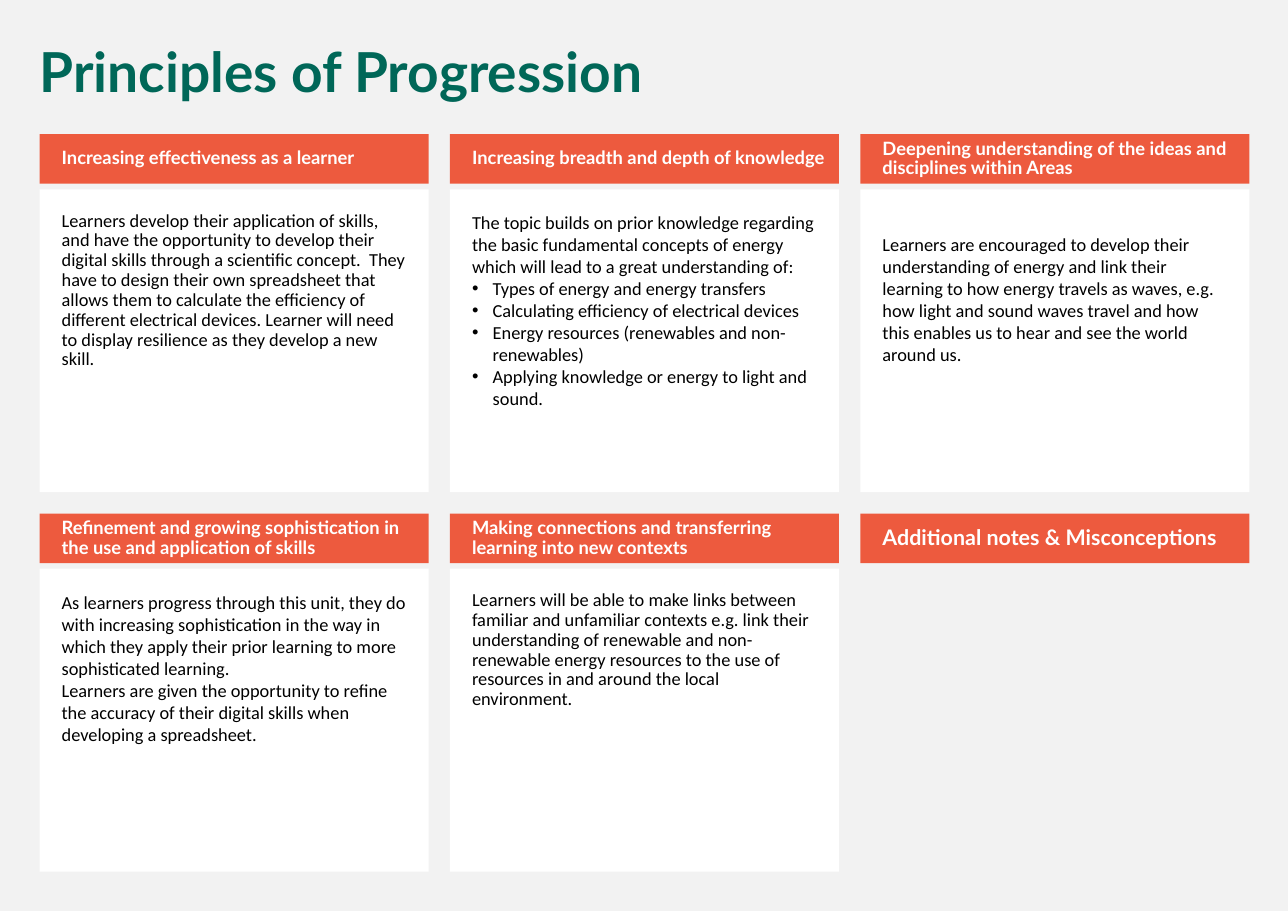
from lxml.etree import SubElement
from pptx import Presentation
from pptx.dml.color import RGBColor
from pptx.enum.shapes import MSO_SHAPE
from pptx.enum.text import MSO_ANCHOR, PP_ALIGN
from pptx.oxml.ns import qn
from pptx.util import Pt

COLORS = {"page": "F2F2F2", "card": "FFFFFF", "header": "ED5A3E",
          "title": "006758", "header_text": "FFFFFF", "body_text": "000000"}

TIGHT = {"line_spacing": 0.9, "space_before": Pt(11)}
LOOSE = {"line_spacing": 1.0, "space_before": Pt(0)}
TITLE_FONT = {"name": "Lato", "size": Pt(36), "bold": True}
HEADER_FONT = {"name": "Lato", "size": Pt(12), "bold": True}
NOTES_FONT = {**HEADER_FONT, "size": Pt(14)}
BODY_FONT = {"name": "Calibri", "size": Pt(12), "bold": False}

LEFT, TOP = 25.9, 87.7
COL_STEP, ROW_STEP = 268.2, 248
CARD_W, HEADER_H = 254.2, 32.4
BODY_OFFSET, BODY_H = 36, 198
PAD, BULLET_INDENT = 14.4, 13.5

# Each card: header, body paragraphs, paragraph format, extra space above the body
CARDS = [
    ("Increasing effectiveness as a learner",
     ["Learners develop their application of skills, and have the opportunity to "
      "develop their digital skills through a scientific concept.  They have to "
      "design their own spreadsheet that allows them to calculate the efficiency "
      "of different electrical devices. Learner will need to display resilience "
      "as they develop a new skill. "], TIGHT, 0),
    ("Increasing breadth and depth of knowledge",
     ["The topic builds on prior knowledge regarding the basic fundamental "
      "concepts of energy which will lead to a great understanding of:",
      "• Types of energy and energy transfers",
      "• Calculating efficiency of electrical devices",
      "• Energy resources (renewables and non-renewables)",
      "• Applying knowledge or energy to light and sound. "], LOOSE, 0),
    ("Deepening understanding of the ideas and disciplines within Areas",
     ["Learners are encouraged to develop their understanding of energy and link "
      "their learning to how energy travels as waves, e.g. how light and sound "
      "waves travel and how this enables us to hear and see the world around us. "],
     LOOSE, 14.4),
    ("Refinement and growing sophistication in the use and application of skills",
     ["As learners progress through this unit, they do with increasing "
      "sophistication in the way in which they apply their prior learning to more "
      "sophisticated learning. ",
      "Learners are given the opportunity to refine the accuracy of their digital "
      "skills when developing a spreadsheet."], LOOSE, 0),
    ("Making connections and transferring learning into new contexts",
     ["Learners will be able to make links between familiar and unfamiliar "
      "contexts e.g. link their understanding of renewable and non-renewable "
      "energy resources to the use of resources in and around the local "
      "environment. "], TIGHT, 0),
    ("Additional notes & Misconceptions", [], TIGHT, 0),
]


def rgb(name):
    return RGBColor.from_string(COLORS[name])


def set_all(obj, values):
    for name, value in values.items():
        setattr(obj, name, value)


def add_bullet(p):
    pPr = p._p.get_or_add_pPr()
    pPr.set("marL", str(Pt(BULLET_INDENT)))
    pPr.set("indent", str(-Pt(BULLET_INDENT)))
    SubElement(pPr, qn("a:buFont")).set("typeface", "Arial")
    SubElement(pPr, qn("a:buChar")).set("char", "•")


def write(sp, paragraphs, font, color, spacing, insets, anchor=MSO_ANCHOR.TOP):
    """Fill a shape with paragraphs; a leading • makes a bulleted one."""
    tf = sp.text_frame
    sides = ("margin_left", "margin_top", "margin_right", "margin_bottom")
    set_all(tf, {"word_wrap": True, "vertical_anchor": anchor,
                 **dict(zip(sides, map(Pt, insets)))})
    for i, text in enumerate(paragraphs):
        p = tf.add_paragraph() if i else tf.paragraphs[0]
        set_all(p, {"alignment": PP_ALIGN.LEFT, **spacing})
        if text.startswith("• "):
            add_bullet(p)
        r = p.add_run()
        r.text = text.removeprefix("• ")
        set_all(r.font, font)
        r.font.color.rgb = rgb(color)


def add_box(s, x, y, w, h, fill):
    sp = s.shapes.add_shape(MSO_SHAPE.RECTANGLE, Pt(x), Pt(y), Pt(w), Pt(h))
    sp.shadow.inherit = False
    sp.fill.solid()
    sp.fill.fore_color.rgb = rgb(fill)
    sp.line.fill.background()
    return sp


def add_title(s, x, y, w, h):
    sp = s.shapes.add_textbox(Pt(x), Pt(y), Pt(w), Pt(h))
    write(sp, ["Principles of Progression"], TITLE_FONT, "title", TIGHT,
          (7.2, 3.6, 7.2, 3.6))


def add_card(s, x, y, header, body, spacing, space_above):
    """Place a header bar and, where there is body text, a white panel below it."""
    if body:
        panel = add_box(s, x, y + BODY_OFFSET, CARD_W, BODY_H, "card")
        write(panel, body, BODY_FONT, "body_text", spacing,
              (PAD, PAD + space_above, PAD, PAD))
    bar = add_box(s, x, y, CARD_W, HEADER_H, "header")
    write(bar, [header], HEADER_FONT if body else NOTES_FONT, "header_text", TIGHT,
          (PAD, 3.6, 7.2, 3.6), MSO_ANCHOR.MIDDLE)


def main():
    prs = Presentation()
    prs.slide_width, prs.slide_height = Pt(841.68), Pt(595.44)
    s = prs.slides.add_slide(prs.slide_layouts[6])
    s.background.fill.solid()
    s.background.fill.fore_color.rgb = rgb("page")
    add_title(s, 18.7, 25.9, 797.8, 46.8)
    for i, card in enumerate(CARDS):
        row, col = divmod(i, 3)
        add_card(s, LEFT + col * COL_STEP, TOP + row * ROW_STEP, *card)
    prs.save("out.pptx")


if __name__ == "__main__":
    main()
